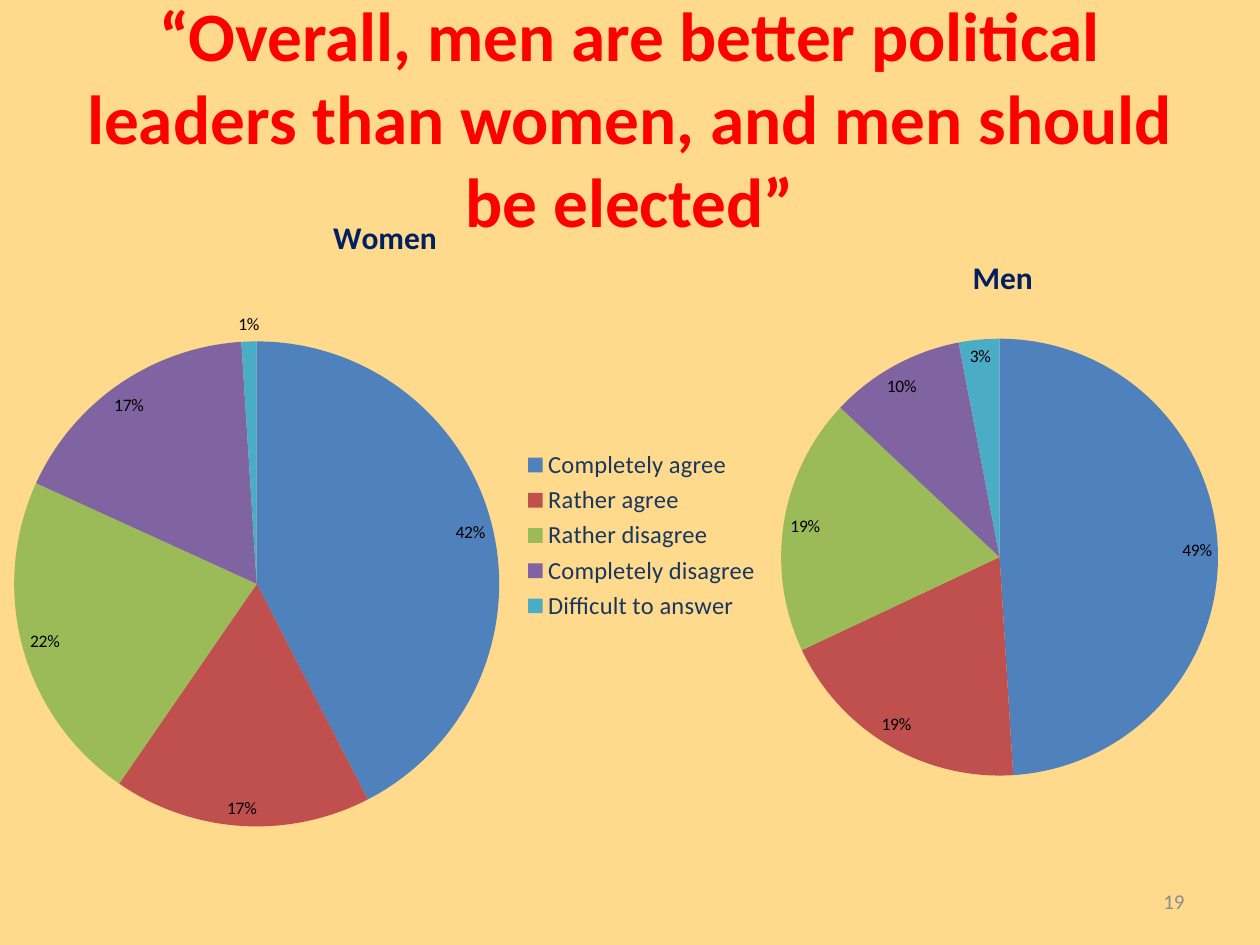
from dataclasses import dataclass

from lxml import etree
from pptx import Presentation
from pptx.chart.data import CategoryChartData
from pptx.dml.color import RGBColor
from pptx.enum.chart import XL_CHART_TYPE, XL_LABEL_POSITION, XL_LEGEND_POSITION
from pptx.enum.text import MSO_ANCHOR, MSO_AUTO_SIZE, PP_ALIGN
from pptx.oxml.ns import qn
from pptx.slide import Slide
from pptx.util import Pt

PIE = XL_CHART_TYPE.PIE
BEST_FIT = XL_LABEL_POSITION.BEST_FIT
LEGEND_RIGHT = XL_LEGEND_POSITION.RIGHT
MIDDLE = MSO_ANCHOR.MIDDLE
NO_AUTOFIT = MSO_AUTO_SIZE.NONE
CENTER, RIGHT = PP_ALIGN.CENTER, PP_ALIGN.RIGHT

COLORS = {
    "background": "FFD98C",
    "title": "FF0000",
    "chart title": "002060",
    "legend": "17375E",
    "labels": "000000",
    "page": "8C8C8C",
}
ANSWERS = {
    "Completely agree": "4F81BD",
    "Rather agree": "C0504D",
    "Rather disagree": "9BBB59",
    "Completely disagree": "8064A2",
    "Difficult to answer": "4BACC6",
}


@dataclass
class SurveySlide:
    """Hold the current slide and the style of its elements."""

    slide: Slide
    font_name: str = "Calibri"

    def style(self, font, size, color, bold=False):
        font.name = self.font_name
        font.size = Pt(size)
        font.bold = bold
        font.color.rgb = RGBColor.from_string(COLORS[color])

    def background(self):
        fill = self.slide.background.fill
        fill.solid()
        fill.fore_color.rgb = RGBColor.from_string(COLORS["background"])

    def add_text(self, frame, text, size, color, align, bold=False):
        paragraph = frame.paragraphs[0]
        paragraph.alignment = align
        run = paragraph.add_run()
        run.text = text
        self.style(run.font, size, color, bold)

    def fill_frame(self, shape, text, size, color, align, bold=False):
        frame = shape.text_frame
        frame.word_wrap = True
        frame.auto_size = NO_AUTOFIT
        frame.vertical_anchor = MIDDLE
        self.add_text(frame, text, size, color, align, bold)

    def title(self, text, left, top, width, height):
        title = self.slide.shapes.title
        title.left, title.top = Pt(left), Pt(top)
        title.width, title.height = Pt(width), Pt(height)
        self.fill_frame(title, text, 39.6, "title", CENTER, True)

    def page_number(self, text, left, top, width, height):
        box = self.slide.shapes.add_textbox(Pt(left), Pt(top), Pt(width), Pt(height))
        self.fill_frame(box, text, 12, "page", RIGHT)

    def pie(self, group, shares, bounds, plot_area, legend=False):
        data = CategoryChartData(number_format="0%")
        data.categories = list(ANSWERS)
        data.add_series(group, shares)
        chart = self.slide.shapes.add_chart(PIE, *map(Pt, bounds), data).chart
        self.style(chart.font, 10, "labels")
        chart.has_title = True
        self.add_text(
            chart.chart_title.text_frame, group, 18, "chart title", CENTER, True
        )
        chart.chart_title.include_in_layout = False
        chart.has_legend = legend
        if legend:
            chart.legend.position = LEGEND_RIGHT
            chart.legend.include_in_layout = False
            self.style(chart.legend.font, 14, "legend")
        plot = chart.plots[0]
        plot.vary_by_categories = True
        plot.has_data_labels = True
        labels = plot.data_labels
        labels.show_value = True
        labels.show_percentage = False
        labels.number_format = "0%"
        labels.number_format_is_linked = False
        labels.position = BEST_FIT
        self.style(labels.font, 10, "labels")
        for index, color in enumerate(ANSWERS.values()):
            slice_format = plot.series[0].points[index].format
            slice_format.fill.solid()
            slice_format.fill.fore_color.rgb = RGBColor.from_string(color)
            slice_format.line.fill.background()
        self.place_plot(chart, plot_area)

    def place_plot(self, chart, plot_area):
        area = chart.element.find(f".//{qn('c:plotArea')}")
        for automatic in area.findall(qn("c:layout")):
            area.remove(automatic)
        layout = etree.Element(qn("c:layout"))
        area.insert(0, layout)
        manual = etree.SubElement(layout, qn("c:manualLayout"))
        settings = [("layoutTarget", "inner"), ("xMode", "edge"), ("yMode", "edge")]
        for tag, value in settings + list(zip("xywh", plot_area)):
            etree.SubElement(manual, qn(f"c:{tag}")).set("val", str(value))


def main():
    presentation = Presentation()
    presentation.slide_width, presentation.slide_height = Pt(720), Pt(540)
    survey = SurveySlide(presentation.slides.add_slide(presentation.slide_layouts[5]))
    survey.background()
    survey.title(
        "“Overall, men are better political leaders than women, and men should be elected”",
        36, 21.6, 648, 90,
    )
    survey.pie(
        "Women", (0.42, 0.17, 0.22, 0.17, 0.01),
        (-2, 108, 444, 396), (0.02, 0.22, 0.63, 0.7), legend=True,
    )
    survey.pie(
        "Men", (0.49, 0.19, 0.19, 0.1, 0.03),
        (396, 132, 354, 342), (0.14, 0.18, 0.71, 0.73),
    )
    survey.page_number("19", 516, 500.5, 168, 28.75)
    presentation.save("out.pptx")


if __name__ == "__main__":
    main()
